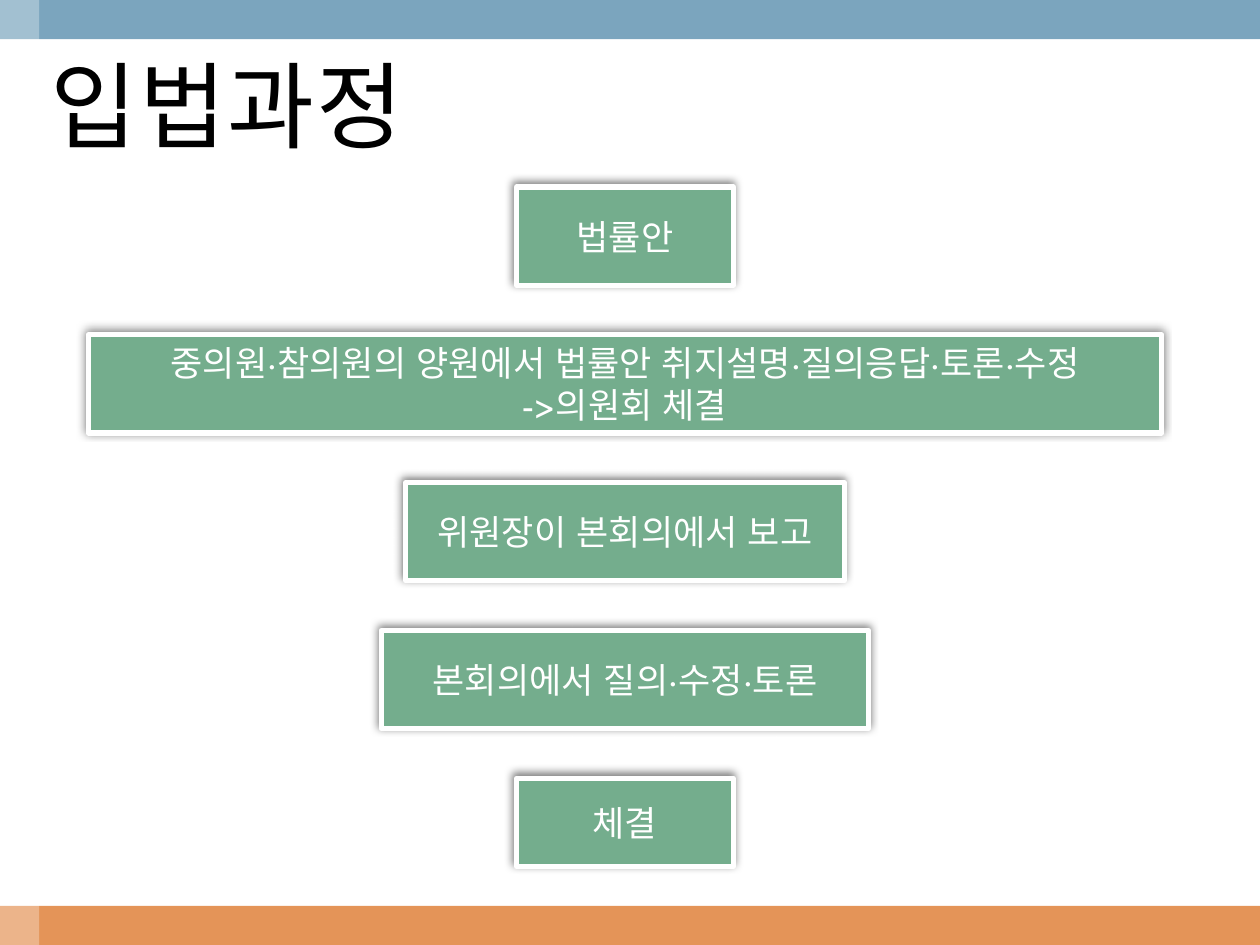
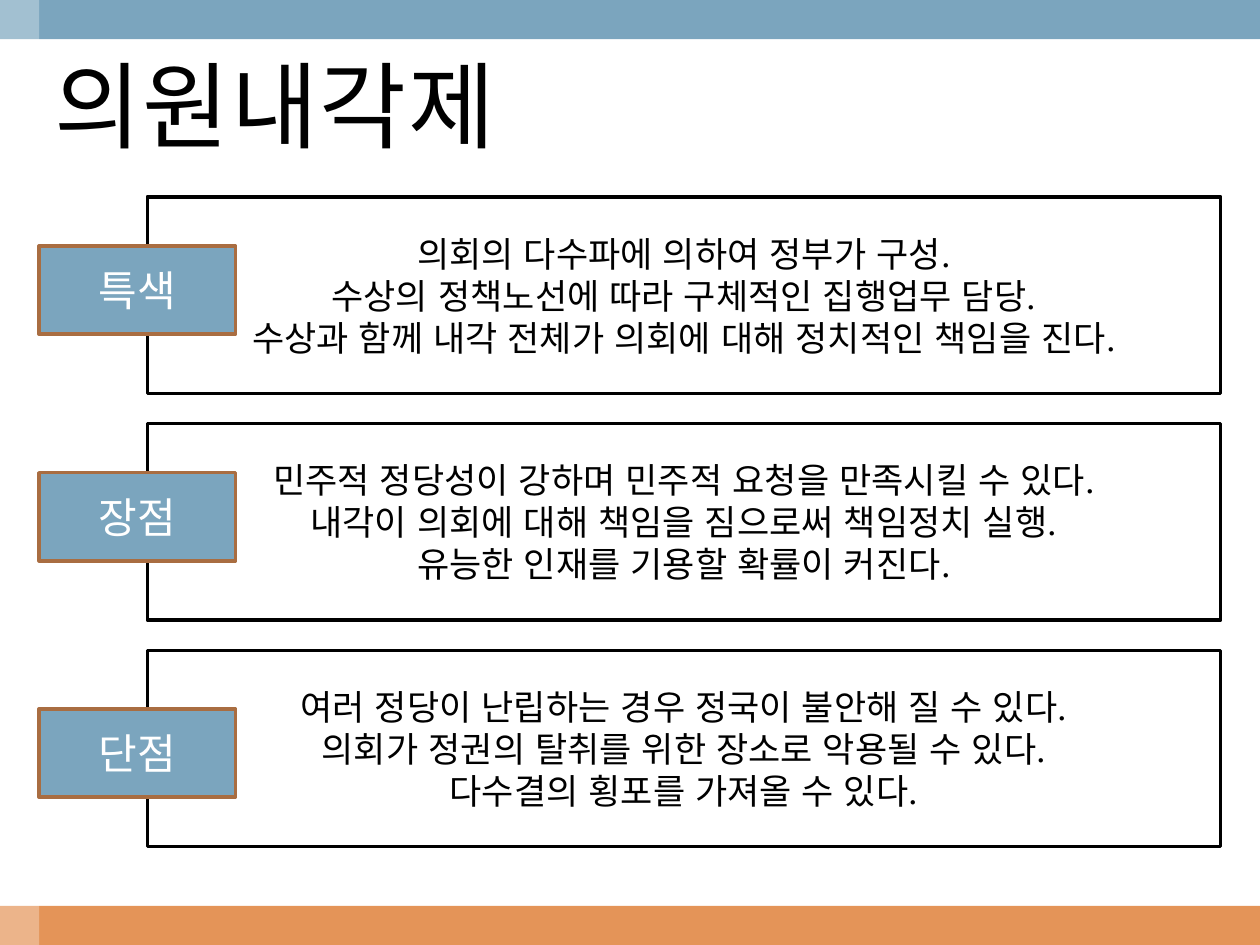
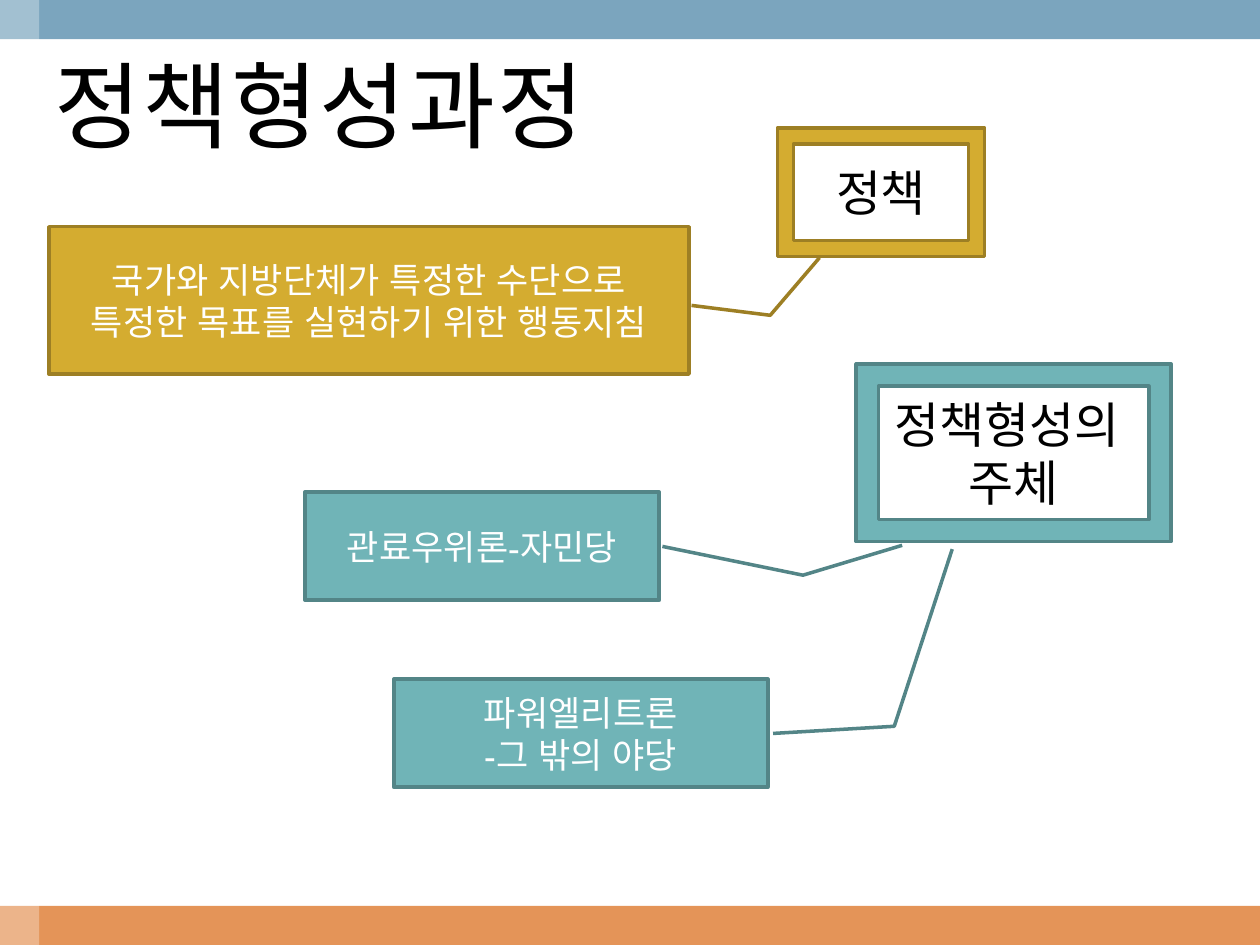
"""Build three slides on law-making, the cabinet system and policy-making."""
from dataclasses import dataclass

from lxml import etree
from pptx import Presentation
from pptx.dml.color import RGBColor
from pptx.enum.shapes import MSO_SHAPE
from pptx.enum.text import MSO_ANCHOR, PP_ALIGN
from pptx.oxml.ns import qn
from pptx.util import Cm, Pt

RECTANGLE = MSO_SHAPE.RECTANGLE
FRAME = MSO_SHAPE.FRAME
CALLOUT = MSO_SHAPE.LINE_CALLOUT_2
MIDDLE = MSO_ANCHOR.MIDDLE
CENTER = PP_ALIGN.CENTER
BLANK_LAYOUT = 6
SLIDE_WIDTH, SLIDE_HEIGHT, BAND = 25.4, 19.05, 0.79
WIDE = 21.64


@dataclass(frozen=True)
class Theme:
    """Colours, font and type sizes of the deck."""
    white: str = "FFFFFF"
    black: str = "000000"
    blue: str = "7BA5BE"
    orange: str = "E49458"
    brown: str = "A96D41"
    green: str = "74AD8D"
    gold: str = "D4AC30"
    dark_gold: str = "9D7F24"
    teal: str = "70B4B7"
    dark_teal: str = "538587"
    font: str = "TeX Gyre Schola"
    title_size: int = 54
    head_size: int = 28
    label_size: int = 24
    body_size: int = 20


@dataclass(frozen=True)
class BoxStyle:
    """Look of a box and of the text in it."""
    fill: str
    line: str
    ink: str
    size: int
    line_width: int = 2


THEME = Theme()
STEP = BoxStyle(THEME.green, THEME.white, THEME.white, THEME.body_size, 3)
PANEL = BoxStyle(THEME.white, THEME.black, THEME.black, THEME.body_size)
LABEL = BoxStyle(THEME.blue, THEME.brown, THEME.white, THEME.label_size)
GOLD_HEAD = BoxStyle(THEME.gold, THEME.dark_gold, THEME.black, THEME.head_size)
GOLD_NOTE = BoxStyle(THEME.gold, THEME.dark_gold, THEME.white, THEME.body_size)
TEAL_HEAD = BoxStyle(THEME.teal, THEME.dark_teal, THEME.black, THEME.head_size)
TEAL_NOTE = BoxStyle(THEME.teal, THEME.dark_teal, THEME.white, THEME.body_size)

STEPS = [
    (4.37, 1.98, ["법률안"]),
    (WIDE, 1.98, ["중의원·참의원의 양원에서 법률안 취지설명·질의응답·토론·수정",
                  "->의원회 체결"]),
    (8.84, 1.98, ["위원장이 본회의에서 보고"]),
    (9.83, 1.98, ["본회의에서 질의·수정·토론"]),
    (4.37, 1.78, ["체결"]),
]
TRAITS = [
    ("특색", 0.99, ["의회의 다수파에 의하여 정부가 구성.",
                  "수상의 정책노선에 따라 구체적인 집행업무 담당.",
                  "수상과 함께 내각 전체가 의회에 대해 정치적인 책임을 진다."]),
    ("장점", 0.99, ["민주적 정당성이 강하며 민주적 요청을 만족시킬 수 있다.",
                  "내각이 의회에 대해 책임을 짐으로써 책임정치 실행.",
                  "유능한 인재를 기용할 확률이 커진다."]),
    ("단점", 1.18, ["여러 정당이 난립하는 경우 정국이 불안해 질 수 있다.",
                  "의회가 정권의 탈취를 위한 장소로 악용될 수 있다.",
                  "다수결의 횡포를 가져올 수 있다."]),
]
HEADS = [
    ((15.67, 2.58, 4.18, 2.59), GOLD_HEAD, ["정책"]),
    ((17.26, 7.34, 6.35, 3.58), TEAL_HEAD, ["정책형성의 ", "주체"]),
]
NOTES = [
    ((0.99, 4.57, 12.9, 2.97), GOLD_NOTE, (0.535, 1.004, 0.602, 1.127, 0.211, 1.204),
     ["국가와 지방단체가 특정한 수단으로 특정한 목표를 실현하기 위한 행동지침"]),
    ((6.15, 9.92, 7.14, 2.18), TEAL_NOTE, (0.503, 1.009, 0.769, 1.406, 0.493, 1.686),
     ["관료우위론-자민당"]),
    ((7.94, 13.69, 7.54, 2.18), TEAL_NOTE, (0.503, 1.014, 0.437, 1.338, -1.202, 1.493),
     ["파워엘리트론", "-그 밖의 야당"]),
]


def add_filled(page, kind, place, color):
    """Add a flat preset shape at a place in centimetres."""
    shape = page.shapes.add_shape(kind, *map(Cm, place))
    shape.shadow.inherit = False
    shape.fill.solid()
    shape.fill.fore_color.rgb = RGBColor.from_string(color)
    return shape


def get_font_node(para):
    """Return the XML element that holds a paragraph's font."""
    return para._p.get_or_add_pPr().get_or_add_defRPr()


def write_lines(frame, lines, size, ink):
    """Write one paragraph per line, anchored in the middle."""
    frame.word_wrap = True
    frame.vertical_anchor = MIDDLE
    for index, line in enumerate(lines):
        para = frame.add_paragraph() if index else frame.paragraphs[0]
        para.text = line
        para.font.name = THEME.font
        para.font.size = Pt(size)
        para.font.color.rgb = RGBColor.from_string(ink)
        etree.SubElement(get_font_node(para), qn("a:ea"), typeface=THEME.font)


def add_box(page, kind, place, style, lines):
    """Add an outlined shape with centred text."""
    box = add_filled(page, kind, place, style.fill)
    box.line.color.rgb = RGBColor.from_string(style.line)
    box.line.width = Pt(style.line_width)
    write_lines(box.text_frame, lines, style.size, style.ink)
    for para in box.text_frame.paragraphs:
        para.alignment = CENTER
    return box


def set_alpha(color_node, percent):
    """Give a colour element an opacity."""
    etree.SubElement(color_node, qn("a:alpha"), val=str(percent * 1000))


def add_soft_shadow(box):
    """Cast a soft shadow upwards from a box."""
    effects = box._element.spPr.find(qn("a:effectLst"))
    shadow = etree.SubElement(effects, qn("a:outerShdw"), blurRad=str(Pt(5)),
                              dist=str(Pt(2)), dir=str(245 * 60000), rotWithShape="0")
    set_alpha(etree.SubElement(shadow, qn("a:srgbClr"), val=THEME.black), 50)


def add_bands(page):
    """Draw the bands at the foot, the head and the left edge."""
    bands = [
        ((0, SLIDE_HEIGHT - BAND, SLIDE_WIDTH, BAND), THEME.orange),
        ((0, 0, SLIDE_WIDTH, BAND), THEME.blue),
        ((0, 0, BAND, SLIDE_HEIGHT), THEME.white),
    ]
    for place, color in bands:
        band = add_filled(page, RECTANGLE, place, color)
        band.line.fill.background()
    set_alpha(band._element.spPr.find(qn("a:solidFill"))[0], 30)


def add_page(deck, title, title_left=0.84):
    """Add a slide with its bands and title."""
    page = deck.slides.add_slide(deck.slide_layouts[BLANK_LAYOUT])
    add_bands(page)
    box = page.shapes.add_textbox(Cm(title_left), Cm(0.78), Cm(23.77), Cm(2.62))
    write_lines(box.text_frame, [title], THEME.title_size, THEME.black)
    get_font_node(box.text_frame.paragraphs[0]).set("spc", "100")
    return page


def build_legislation(deck):
    """Stack the steps of law-making on one centre line."""
    page = add_page(deck, "입법과정", title_left=0.77)
    center, top, pitch = 12.6, 3.77, 2.98
    for row, (width, height, lines) in enumerate(STEPS):
        place = (center - width / 2, top + row * pitch, width, height)
        add_soft_shadow(add_box(page, RECTANGLE, place, STEP, lines))


def build_cabinet_system(deck):
    """List the traits of the cabinet system in labelled panels."""
    page = add_page(deck, "의원내각제")
    first_top, pitch = 3.97, 4.57
    for row, (label, label_drop, lines) in enumerate(TRAITS):
        top = first_top + row * pitch
        add_box(page, RECTANGLE, (2.97, top, WIDE, 3.96), PANEL, lines)
        add_box(page, RECTANGLE, (BAND, top + label_drop, 3.96, 1.78), LABEL, [label])


def build_policy_making(deck):
    """Explain each framed head by callouts."""
    page = add_page(deck, "정책형성과정")
    for place, style, lines in HEADS:
        add_box(page, FRAME, place, style, lines)
    for place, style, pointer, lines in NOTES:
        note = add_box(page, CALLOUT, place, style, lines)
        for index, value in enumerate(pointer):
            note.adjustments[index] = value


def main():
    """Build and save the deck."""
    deck = Presentation()
    deck.slide_width, deck.slide_height = Cm(SLIDE_WIDTH), Cm(SLIDE_HEIGHT)
    build_legislation(deck)
    build_cabinet_system(deck)
    build_policy_making(deck)
    deck.save("out.pptx")


if __name__ == "__main__":
    main()
